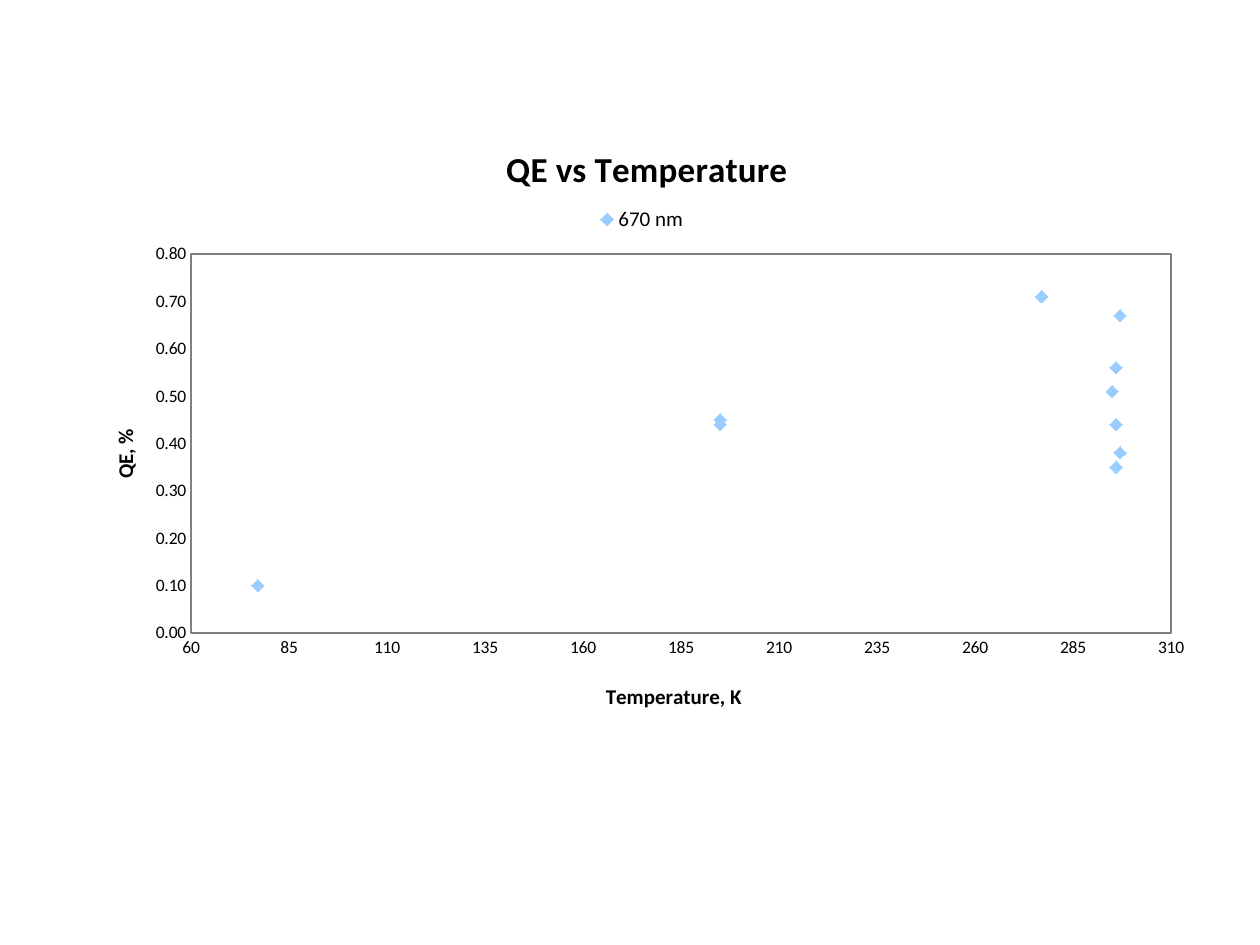
"""Build a slide with a scatter chart of QE against temperature."""
from lxml import etree
from pptx import Presentation
from pptx.chart.data import XyChartData
from pptx.dml.color import RGBColor
from pptx.enum.chart import (XL_CHART_TYPE, XL_LEGEND_POSITION,
                             XL_MARKER_STYLE, XL_TICK_MARK)
from pptx.oxml import parse_xml
from pptx.oxml.ns import nsdecls
from pptx.util import Emu, Pt

SCATTER = XL_CHART_TYPE.XY_SCATTER
TOP = XL_LEGEND_POSITION.TOP
DIAMOND = XL_MARKER_STYLE.DIAMOND
NO_TICK = XL_TICK_MARK.NONE

BLACK = RGBColor(0, 0, 0)
GRAY = RGBColor(0x80, 0x80, 0x80)
BLUE = RGBColor(0x99, 0xCC, 0xFF)

FONT = "Calibri"
TITLE = "QE vs Temperature"
SERIES = "670 nm"
POINTS = [
    (295, 0.51), (277, 0.71), (296, 0.56), (195, 0.44), (296, 0.44),
    (195, 0.45), (297, 0.67), (77, 0.10), (297, 0.38), (296, 0.35),
]
AXES = [
    ("Temperature, K", 60, 310, 25, "0"),
    ("QE, %", 0, 0.8, 0.1, "0.00"),
]
PX = 914400 // 126
SLIDE = (1260, 945)
FRAME = (73, 105, 1134, 624)
PLOT = (191, 254, 980, 379)
TITLES = [(500, 138), (602, 678), (107, 425)]
LEGEND = (594, 202)


def layout(left, top, wide=None, high=None):
    x, y, w, h = FRAME
    parts = {"x": (left - x) / w, "y": (top - y) / h}
    inner = ""
    if wide:
        parts.update(w=wide / w, h=high / h)
        inner = '<c:layoutTarget val="inner"/>'
    modes = "".join(f'<c:{k}Mode val="edge"/>' for k in "xy")
    sizes = "".join(f'<c:{k} val="{v:.4f}"/>' for k, v in parts.items())
    return parse_xml(f'<c:layout {nsdecls("c")}><c:manualLayout>{inner}{modes}'
                     f'{sizes}</c:manualLayout></c:layout>')


def place(node, spot):
    for old in node.xpath("./c:layout"):
        node.remove(old)
    lead = node.xpath("./c:tx | ./c:legendPos")
    if lead:
        lead[0].addnext(layout(*spot))
    else:
        node.insert(0, layout(*spot))


def style(font, size, bold=False):
    font.name, font.size, font.bold = FONT, Pt(size), bold
    font.color.rgb = BLACK


def label(title, text, size):
    frame = title.text_frame
    frame.text = text
    style(frame.paragraphs[0].font, size, True)


def main():
    deck = Presentation()
    deck.slide_width, deck.slide_height = (Emu(n * PX) for n in SLIDE)
    slide = deck.slides.add_slide(deck.slide_layouts[6])

    data = XyChartData()
    group = data.add_series(SERIES)
    for x, y in POINTS:
        group.add_data_point(x, y)
    box = [Emu(n * PX) for n in FRAME]
    chart = slide.shapes.add_chart(SCATTER, *box, data).chart
    style(chart.font, 10)
    label(chart.chart_title, TITLE, 20)
    chart.has_legend = True
    chart.legend.position = TOP
    chart.legend.include_in_layout = False
    style(chart.legend.font, 12)

    for axis, spec in zip((chart.category_axis, chart.value_axis), AXES):
        text, low, high, step, form = spec
        label(axis.axis_title, text, 12)
        axis.minimum_scale, axis.maximum_scale = low, high
        axis.major_unit = step
        axis.has_major_gridlines = False
        axis.major_tick_mark = axis.minor_tick_mark = NO_TICK
        axis.tick_labels.number_format = form
        axis.tick_labels.number_format_is_linked = False
        axis.format.line.color.rgb = GRAY

    chart.plots[0].vary_by_categories = False
    series = chart.plots[0].series[0]
    series.format.line.fill.background()
    mark = series.marker
    mark.style, mark.size = DIAMOND, 7
    mark.format.fill.solid()
    mark.format.fill.fore_color.rgb = BLUE
    mark.format.line.color.rgb = BLUE

    root = chart.element
    plot = root.xpath("//c:plotArea")[0]
    place(plot, PLOT)
    for node, spot in zip(root.xpath("//c:title"), TITLES):
        place(node, spot)
    place(root.xpath("//c:legend")[0], LEGEND)
    plot.append(etree.fromstring(
        f'<c:spPr {nsdecls("c", "a")}><a:noFill/><a:ln w="9525"><a:solidFill>'
        f'<a:srgbClr val="{GRAY}"/></a:solidFill></a:ln></c:spPr>'))
    deck.save("out.pptx")


if __name__ == "__main__":
    main()
